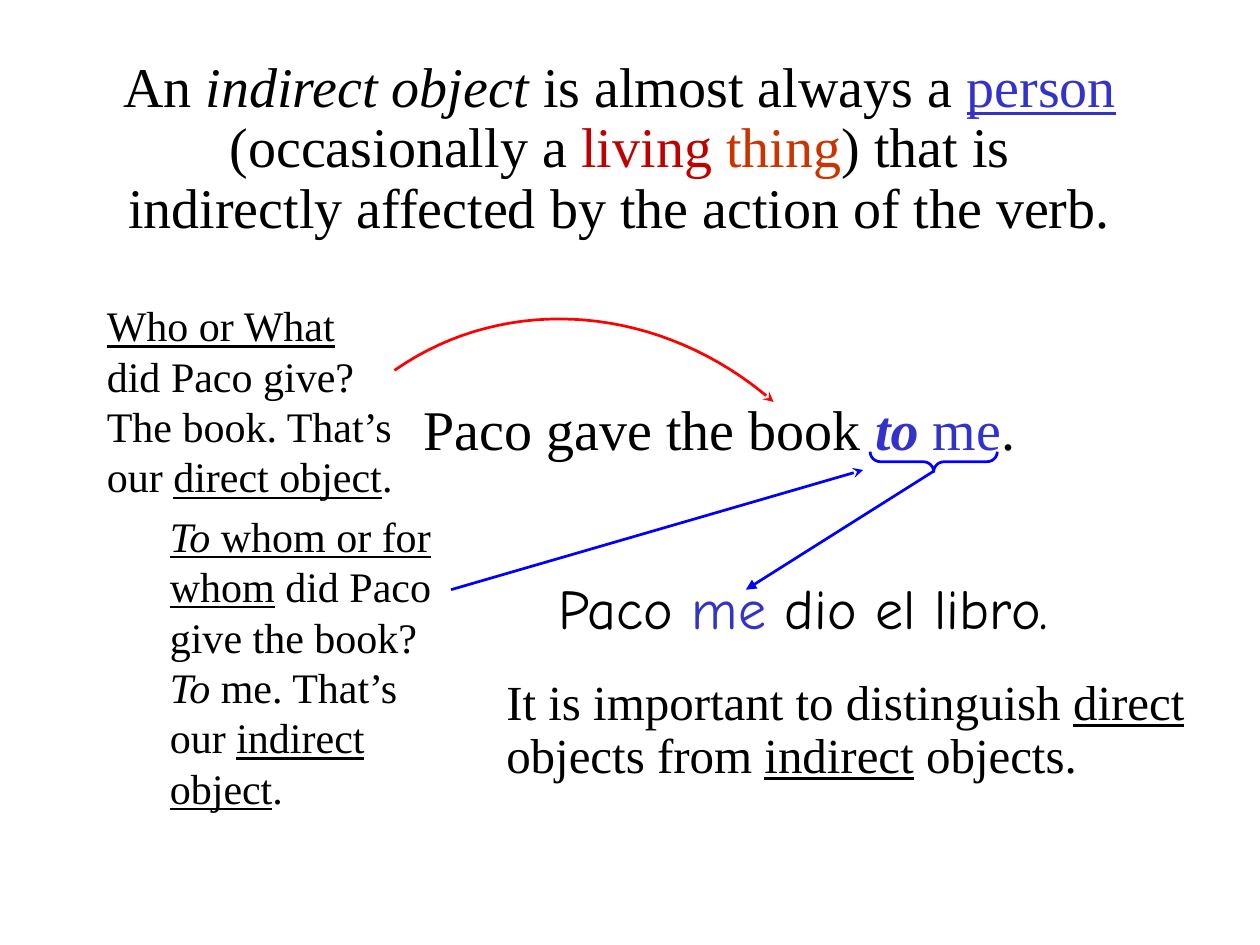
from lxml import etree
from pptx import Presentation
from pptx.dml.color import RGBColor
from pptx.enum.shapes import MSO_CONNECTOR, MSO_SHAPE
from pptx.enum.text import MSO_ANCHOR, PP_ALIGN
from pptx.oxml.ns import qn
from pptx.util import Inches, Pt

BLACK = RGBColor(0, 0, 0)
INDIGO = RGBColor(0x33, 0x33, 0xCC)
MAROON = RGBColor(0xC0, 0, 0)
RUST = RGBColor(0xCC, 0x33, 0)
RED = RGBColor(0xFF, 0, 0)
BLUE = RGBColor(0, 0, 0xFF)

CENTER, LEFT = PP_ALIGN.CENTER, PP_ALIGN.LEFT
TOP = MSO_ANCHOR.TOP
STRAIGHT = MSO_CONNECTOR.STRAIGHT
BRACE = MSO_SHAPE.RIGHT_BRACE

SERIF, COMIC = "Times New Roman", "Comic Neue"
WIDE, HIGH = 10, 7.5
STROKE = 1.55


def place(shape, box):
    shape.left, shape.top, shape.width, shape.height = map(Inches, box)


def write(shape, runs, size, face=SERIF, align=LEFT, pitch=None):
    """Fill a shape with one paragraph; a run is (text, style letters, colour)."""
    frame = shape.text_frame
    frame.word_wrap = True
    frame.vertical_anchor = TOP
    para = frame.paragraphs[0]
    para.alignment = align
    para.font.size = Pt(size)
    para.font.name = face
    if pitch:
        para.line_spacing = pitch
    for text, style, color in runs:
        run = para.add_run()
        run.text = text
        font = run.font
        font.color.rgb = color
        if "b" in style:
            font.bold = True
        if "i" in style:
            font.italic = True
        if "u" in style:
            font.underline = True


def add_text(slide, box, runs, size, **look):
    shape = slide.shapes.add_textbox(0, 0, 0, 0)
    place(shape, box)
    write(shape, runs, size, **look)


def ink(shape, color, head=None):
    """Draw the outline, with an arrowhead at its end if one is named."""
    shape.line.color.rgb = color
    shape.line.width = Pt(STROKE)
    if head:
        line = shape.line._get_or_add_ln()
        etree.SubElement(line, qn("a:tailEnd"), type=head)


def add_arrow(shapes, start, end, color, head):
    arrow = shapes.add_connector(STRAIGHT, *map(Inches, start + end))
    ink(arrow, color, head)
    etree.SubElement(arrow._element.spPr, qn("a:effectLst"))


def add_curve(slide, knots, color, head, steps=32):
    """Trace a cubic Bezier curve through short segments."""
    points = []
    for step in range(steps + 1):
        t = step / steps
        parts = ((1 - t) ** 3, 3 * t * (1 - t) ** 2, 3 * t * t * (1 - t), t ** 3)
        points.append(tuple(
            Inches(sum(part * knot[axis] for part, knot in zip(parts, knots)))
            for axis in (0, 1)))
    path = slide.shapes.build_freeform(*points[0])
    path.add_line_segments(points[1:], close=False)
    curve = path.convert_to_shape()
    curve.shadow.inherit = False
    curve.fill.background()
    ink(curve, color, head)


def add_brace(slide):
    """Group the brace under 'to me' with its arrow to the Spanish 'me'."""
    shapes = slide.shapes.add_group_shape().shapes
    brace = shapes.add_shape(BRACE, 0, 0, 0, 0)
    place(brace, (7.33, 3.16, 0.16, 1.01))
    brace.rotation = 90
    brace.adjustments[0] = 0.52
    brace.shadow.inherit = False
    brace.fill.background()
    ink(brace, BLUE)
    add_arrow(shapes, (7.41, 3.74), (5.92, 4.68), BLUE, "triangle")


def main():
    deck = Presentation()
    deck.slide_width, deck.slide_height = Inches(WIDE), Inches(HIGH)
    slide = deck.slides.add_slide(deck.slide_layouts[5])

    title = slide.shapes.title
    place(title, (WIDE / 12, HIGH / 18, 8.17, 1.92))
    write(title, [
        ("An ", "", BLACK), ("indirect object", "i", BLACK),
        (" is almost always a ", "", BLACK), ("person", "u", INDIGO),
        (" (occasionally a ", "", BLACK), ("living ", "", MAROON),
        ("thing", "", RUST),
        (") that is indirectly affected by the action of the verb.", "", BLACK),
    ], 32, align=CENTER, pitch=0.9)

    add_text(slide, (3.25, 3.08, 4.92, 0.75), [
        ("Paco gave the book ", "", BLACK), ("to", "bi", INDIGO),
        (" me", "", INDIGO), (".", "", BLACK),
    ], 32, align=CENTER)
    add_text(slide, (4.08, 4.5, 4.59, 0.75), [
        ("Paco ", "", BLACK), ("me", "", INDIGO),
        (" dio el libro.", "", BLACK),
    ], 32, face=COMIC, align=CENTER)
    add_brace(slide)

    add_text(slide, (0.75, 2.33, 2.5, 1.72), [
        ("Who or What", "u", BLACK),
        (" did Paco give? The book. That’s our ", "", BLACK),
        ("direct object", "u", BLACK), (".", "", BLACK),
    ], 24)
    add_text(slide, (1.25, 4, 2.5, 2.52), [
        ("To", "iu", BLACK), (" whom or for whom", "u", BLACK),
        (" did Paco give the book? ", "", BLACK), ("To", "i", BLACK),
        (" me. That’s our ", "", BLACK), ("indirect object", "u", BLACK),
        (".", "", BLACK),
    ], 24)

    add_curve(slide, [(3.13, 2.94), (4.03, 2.31), (5.26, 2.42), (6.14, 3.19)],
              RED, "stealth")
    add_arrow(slide.shapes, (3.58, 4.68), (6.85, 3.73), BLUE, "stealth")

    add_text(slide, (3.92, 5.33, 5.83, 0.94), [
        ("It is important to distinguish ", "", BLACK),
        ("direct", "u", BLACK), (" objects from ", "", BLACK),
        ("indirect", "u", BLACK), (" objects.", "", BLACK),
    ], 28, pitch=0.9)

    deck.save("out.pptx")


if __name__ == "__main__":
    main()
